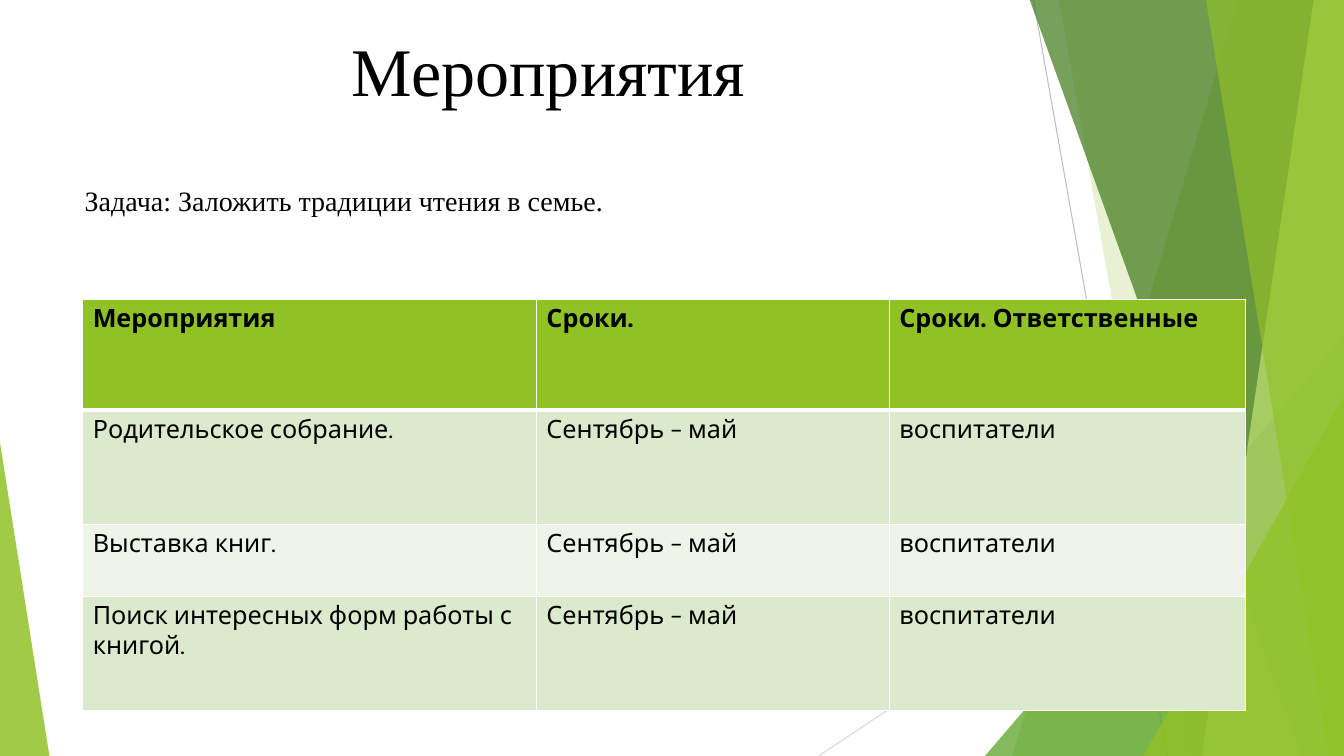
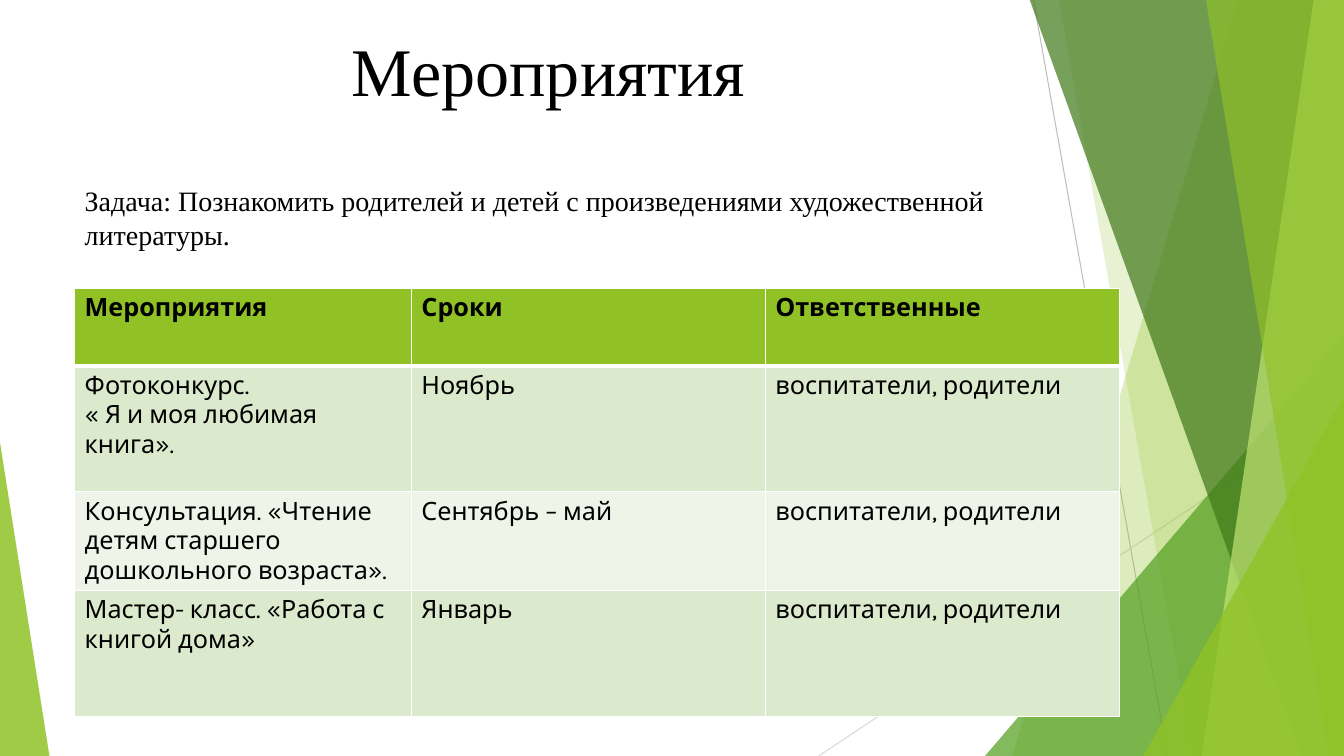
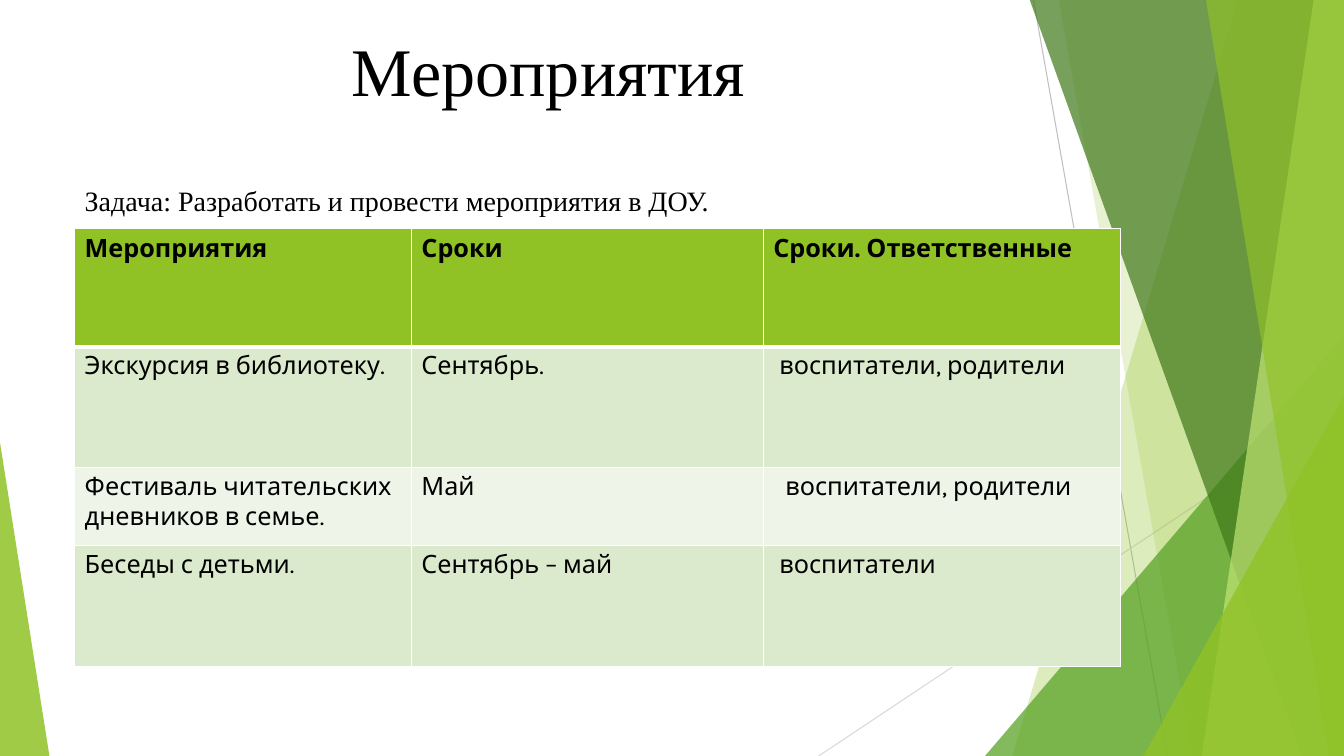
"""Build three slides of reading activities on a shared faceted green layout."""
from dataclasses import dataclass

from lxml import etree
from pptx import Presentation
from pptx import util as u
from pptx.dml.color import RGBColor
from pptx.enum import shapes, text
from pptx.oxml.ns import qn

PX = 9144
WIDTH, HEIGHT = 1333, 750


@dataclass(frozen=True)
class Theme:
    """Colours, fonts and type sizes shared by all slides."""

    ink: str = "000000"
    border: str = "FFFFFF"
    green: str = "90C226"
    leaf: str = "54A021"
    forest: str = "3F7819"
    lime: str = "C0E474"
    steep_line: str = "BFBFBF"
    flat_line: str = "D9D9D9"
    bands: tuple[str, str] = ("DBE9CD", "EEF4E8")
    serif: str = "Times New Roman"
    sans: str = "Karla"
    title_size: float = 48.6
    task_size: float = 20
    table_size: float = 18
    hairline: float = 0.75
    thin: float = 1
    thick: float = 3


THEME = Theme()


@dataclass(frozen=True)
class Ray:
    """A thin straight line of the backdrop."""

    start: tuple[int, int]
    end: tuple[int, int]
    color: str


@dataclass(frozen=True)
class Facet:
    """A translucent area between a slanted edge and the right slide edge."""

    top_x: int
    bottom_x: int
    color: str
    opacity: int


@dataclass(frozen=True)
class Wedge:
    """A translucent right triangle standing on the bottom slide edge."""

    left: int
    top: int
    width: int
    apex: int
    color: str
    opacity: int


@dataclass(frozen=True)
class Row:
    """A table row with its height and the extra indent of its last cell."""

    height: int
    cells: tuple[str, str, str]
    last_indent: int = 0


@dataclass(frozen=True)
class Activities:
    """The content and geometry of one slide."""

    task: str
    title_top: int
    body_height: int
    table_left: int
    table_top: int
    columns: tuple[int, int, int]
    rows: tuple[Row, ...]


RAYS = (
    Ray((1025, 0), (1158, HEIGHT), THEME.steep_line),
    Ray((WIDTH, 403), (812, HEIGHT), THEME.flat_line),
)
PANES = (
    Facet(1228, 1004, THEME.green, 30),
    Facet(1050, 1183, THEME.green, 20),
    Wedge(977, 333, 356, 1, THEME.leaf, 72),
    Facet(1021, 1291, THEME.forest, 70),
    Facet(1303, 1192, THEME.lime, 70),
    Facet(1196, 1318, THEME.green, 65),
    Wedge(1134, 393, 199, 1, THEME.green, 80),
    Wedge(0, 439, 49, 0, THEME.green, 85),
)
SLIDES = (
    Activities(
        "Задача: Заложить традиции чтения в семье.",
        61, 483, 82, 297, (450, 350, 353),
        (
            Row(110, ("Мероприятия", "Сроки.", "Сроки. Ответственные")),
            Row(113, ("Родительское собрание.", "Сентябрь – май", "воспитатели")),
            Row(72, ("Выставка книг.", "Сентябрь – май", "воспитатели")),
            Row(113, ("Поиск интересных форм работы с книгой.", "Сентябрь – май", "воспитатели")),
        ),
    ),
    Activities(
        "Задача: Познакомить родителей и детей с произведениями художественной литературы.",
        12, 536, 74, 286, (334, 351, 351),
        (
            Row(77, ("Мероприятия", "Сроки", "Ответственные")),
            Row(125, ("Фотоконкурс.\n« Я и моя любимая книга».", "Ноябрь", "воспитатели, родители")),
            Row(94, ("Консультация. «Чтение детям старшего дошкольного возраста».",
                     "Сентябрь – май", "воспитатели, родители")),
            Row(125, ("Мастер- класс. «Работа с книгой дома»", "Январь", "воспитатели, родители")),
        ),
    ),
    Activities(
        "Задача: Разработать и провести мероприятия в ДОУ.",
        12, 483, 74, 227, (334, 349, 354),
        (
            Row(117, ("Мероприятия", "Сроки", "Сроки. Ответственные")),
            Row(120, ("Экскурсия в библиотеку.", "Сентябрь.", "воспитатели, родители"), 6),
            Row(77, ("Фестиваль читательских дневников в семье.", "Май", "воспитатели, родители"), 12),
            Row(120, ("Беседы с детьми.", "Сентябрь – май", "воспитатели"), 6),
        ),
    ),
)


def px(length: int) -> u.Emu:
    """Turn whole pixels into EMU."""
    return u.Emu(length * PX)


def style_font(paragraph, name: str, size: float, bold: bool = False) -> None:
    """Set the font of a whole paragraph."""
    font = paragraph.font
    font.name, font.size, font.bold = name, u.Pt(size), bold
    font.color.rgb = RGBColor.from_string(THEME.ink)


def draw_ray(slide, ray: Ray):
    """Draw a backdrop line and return it."""
    connector = slide.shapes.add_connector(
        shapes.MSO_CONNECTOR.STRAIGHT, *map(px, ray.start + ray.end))
    connector.line.color.rgb = RGBColor.from_string(ray.color)
    connector.line.width = u.Pt(THEME.hairline)
    etree.SubElement(connector.element.spPr, qn("a:effectLst"))
    return connector


def draw_pane(slide, pane: Facet | Wedge):
    """Draw a translucent backdrop pane and return it."""
    if isinstance(pane, Facet):
        builder = slide.shapes.build_freeform(pane.top_x, -1, scale=PX)
        builder.add_line_segments(
            [(WIDTH, -1), (WIDTH, HEIGHT), (pane.bottom_x, HEIGHT)], close=True)
        shape = builder.convert_to_shape()
    else:
        shape = slide.shapes.add_shape(
            shapes.MSO_SHAPE.ISOSCELES_TRIANGLE, px(pane.left), px(pane.top),
            px(pane.width), px(HEIGHT - pane.top))
        shape.adjustments[0] = pane.apex
    shape.shadow.inherit = False
    shape.line.fill.background()
    shape.fill.solid()
    shape.fill.fore_color.rgb = RGBColor.from_string(pane.color)
    color = shape.element.spPr.find(f".//{qn('a:srgbClr')}")
    etree.SubElement(color, qn("a:alpha"), val=str(pane.opacity * 1000))
    return shape


def move_backdrop_to_layout(slide) -> None:
    """Draw the backdrop once and hand it over to the slide's layout."""
    layout = slide.slide_layout
    for placeholder in list(layout.placeholders):
        if placeholder.placeholder_format.idx >= 10:
            placeholder.element.getparent().remove(placeholder.element)
    backdrop = [draw_ray(slide, ray) for ray in RAYS]
    backdrop += [draw_pane(slide, pane) for pane in PANES]
    for shape in backdrop:
        layout.element.cSld.spTree.append(shape.element)


def fill_placeholder(placeholder, box: tuple[int, int, int, int], wording: str, size: float):
    """Place a placeholder, write its only paragraph and return its text frame."""
    placeholder.left, placeholder.top, placeholder.width, placeholder.height = map(px, box)
    frame = placeholder.text_frame
    frame.text = wording
    frame.word_wrap = True
    frame.auto_size = text.MSO_AUTO_SIZE.NONE
    paragraph = frame.paragraphs[0]
    properties = paragraph._p.get_or_add_pPr()
    properties.set("marL", "0")
    properties.set("indent", "0")
    etree.SubElement(properties, qn("a:buNone"))
    paragraph.space_before = u.Pt(0)
    style_font(paragraph, THEME.serif, size)
    return frame


def set_borders(cell, top: float, bottom: float) -> None:
    """Give a cell white borders of the given top and bottom widths."""
    properties = cell._tc.get_or_add_tcPr()
    widths = {"lnL": THEME.thin, "lnR": THEME.thin, "lnT": top, "lnB": bottom}
    for side, width in widths.items():
        line = etree.SubElement(properties, qn(f"a:{side}"), w=str(u.Pt(width)))
        fill = etree.SubElement(line, qn("a:solidFill"))
        etree.SubElement(fill, qn("a:srgbClr"), val=THEME.border)


def draw_table(slide, activities: Activities) -> None:
    """Draw the table of activities with a header and banded rows."""
    rows, columns = activities.rows, activities.columns
    table = slide.shapes.add_table(
        len(rows), len(columns), px(activities.table_left), px(activities.table_top),
        px(sum(columns)), px(sum(row.height for row in rows))).table
    for column, width in zip(table.columns, columns):
        column.width = px(width)
    for index, row in enumerate(rows):
        table.rows[index].height = px(row.height)
        header = index == 0
        color = THEME.green if header else THEME.bands[(index - 1) % 2]
        for position, wording in enumerate(row.cells):
            cell = table.cell(index, position)
            cell.text = wording
            set_borders(cell, THEME.thick if index == 1 else THEME.thin,
                        THEME.thick if header else THEME.thin)
            cell.fill.solid()
            cell.fill.fore_color.rgb = RGBColor.from_string(color)
            for paragraph in cell.text_frame.paragraphs:
                style_font(paragraph, THEME.sans, THEME.table_size, header)
        cell.margin_left = px(10 + row.last_indent)


def fill_slide(slide, activities: Activities) -> None:
    """Write the title, the task and the table of one slide."""
    top = activities.title_top
    frame = fill_placeholder(
        slide.shapes.title, (74, top, 940, 178 - top), "Мероприятия", THEME.title_size)
    frame.vertical_anchor = text.MSO_ANCHOR.BOTTOM
    frame.margin_bottom = px(69)
    frame.paragraphs[0].alignment = text.PP_ALIGN.CENTER
    fill_placeholder(
        slide.placeholders[1], (74, 177, 997, activities.body_height),
        activities.task, THEME.task_size)
    draw_table(slide, activities)


def main() -> None:
    """Build and save the presentation."""
    presentation = Presentation()
    presentation.slide_width, presentation.slide_height = px(WIDTH), px(HEIGHT)
    layout = presentation.slide_layouts[1]
    for index, activities in enumerate(SLIDES):
        slide = presentation.slides.add_slide(layout)
        if index == 0:
            move_backdrop_to_layout(slide)
        fill_slide(slide, activities)
    presentation.save("out.pptx")


if __name__ == "__main__":
    main()
